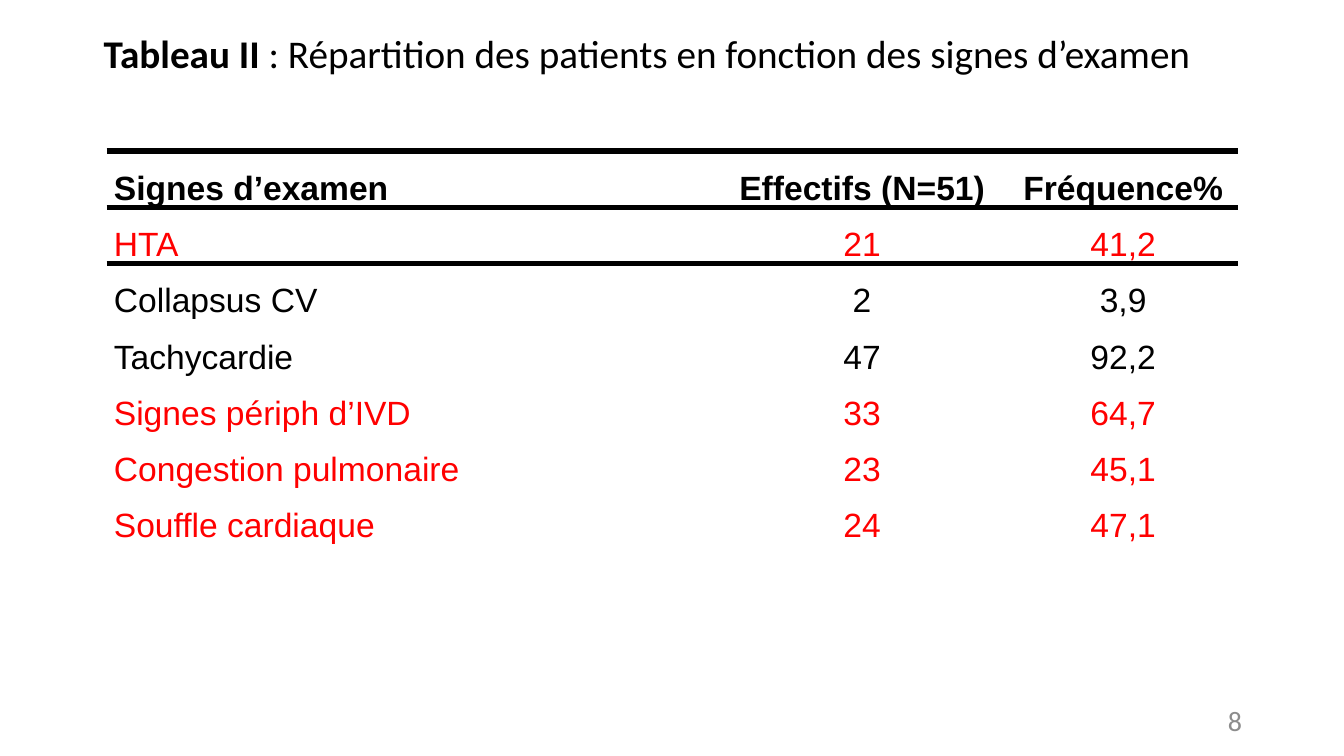
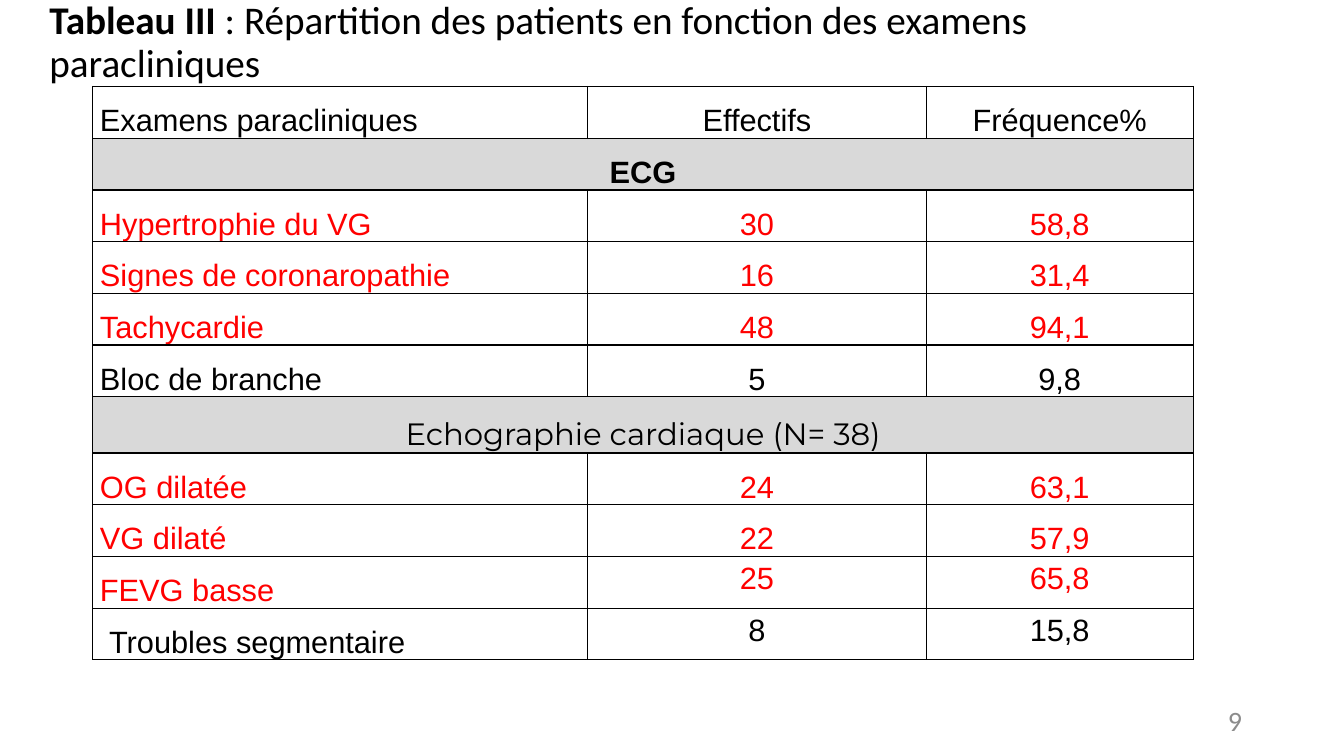
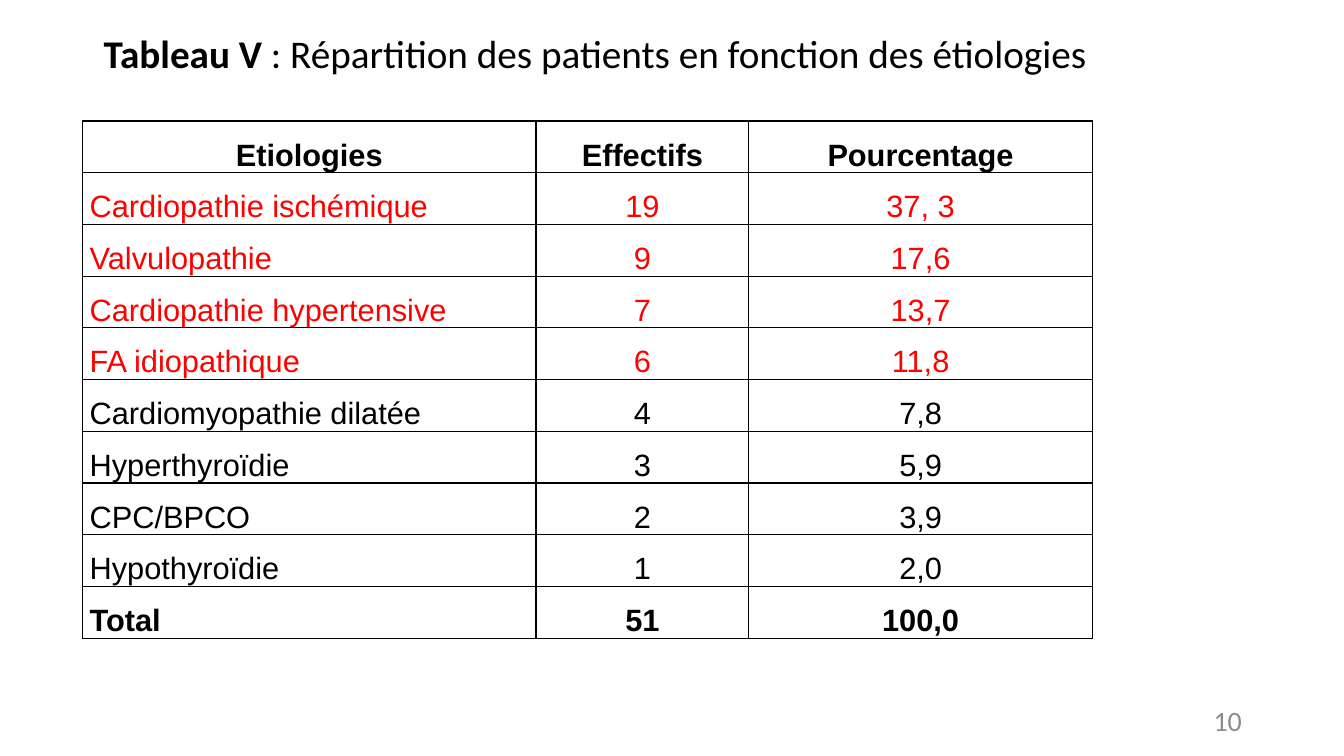
"""Build three slides of patient tables with numbered footers."""
from dataclasses import dataclass

from lxml.etree import SubElement
from pptx import Presentation
from pptx.dml.color import RGBColor
from pptx.enum.text import MSO_ANCHOR, MSO_AUTO_SIZE, PP_ALIGN
from pptx.oxml.ns import qn
from pptx.slide import Slide
from pptx.table import _Cell as Cell
from pptx.util import Cm, Pt

HUES = {"ink": "000000", "red": "FF0000", "band": "D9D9D9", "page": "8C8C8C"}
PLAIN = "{2D5ABB26-0587-4C30-8999-92F81FD0307C}"
WIDE = (2.36, 0.2, 29.21, 2.39)


@dataclass
class Row:
    cells: tuple[str, ...]
    hue: str = "ink"
    bold: bool = False
    mid: bool = False
    band: bool = False
    font: str = "Arial"
    tight: bool = False
    inset: float = 0


@dataclass
class Sheet:
    page: int
    label: str
    title: str
    box: tuple[float, float, float, float]
    left: float
    top: float
    cols: tuple[float, ...]
    high: float
    size: int
    rows: list[Row]
    boxed: bool = True


SHEETS = [
    Sheet(8, "Tableau II", " : Répartition des patients en fonction des signes d’examen",
          WIDE, 2.69, 3.81, (15.34, 7.39, 5.77), 1.41, 24, [
              Row(("Signes d’examen", "Effectifs (N=51)", "Fréquence%"), bold=True),
              Row(("HTA", "21", "41,2"), "red"),
              Row(("Collapsus CV", "2", "3,9")),
              Row(("Tachycardie", "47", "92,2")),
              Row(("Signes périph d’IVD", "33", "64,7"), "red"),
              Row(("Congestion pulmonaire", "23", "45,1"), "red"),
              Row(("Souffle cardiaque", "24", "47,1"), "red"),
          ], boxed=False),
    Sheet(9, "Tableau III", " : Répartition des patients en fonction des examens paracliniques",
          (0.99, 0, 29.97, 2.18), 2.34, 2.18, (12.47, 8.53, 6.73), 1.3, 22, [
              Row(("Examens paracliniques", "Effectifs", "Fréquence%")),
              Row(("ECG",), bold=True, mid=True, band=True),
              Row(("Hypertrophie du VG", "30", "58,8"), "red"),
              Row(("Signes de coronaropathie", "16", "31,4"), "red"),
              Row(("Tachycardie", "48", "94,1"), "red"),
              Row(("Bloc de branche", "5", "9,8")),
              Row(("Echographie cardiaque (N= 38)",), mid=True, band=True, font="Montserrat"),
              Row(("OG dilatée", "24", "63,1"), "red"),
              Row(("VG dilaté", "22", "57,9"), "red"),
              Row(("FEVG basse", "25", "65,8"), "red", tight=True),
              Row(("Troubles segmentaire", "8", "15,8"), tight=True, inset=0.23),
          ]),
    Sheet(10, "Tableau V", " : Répartition des patients en fonction des étiologies",
          WIDE, 2.08, 3.05, (11.43, 5.36, 8.66), 1.3, 22, [
              Row(("Etiologies", "Effectifs", "Pourcentage"), bold=True, mid=True),
              Row(("Cardiopathie ischémique", "19", "37, 3"), "red"),
              Row(("Valvulopathie", "9", "17,6"), "red"),
              Row(("Cardiopathie hypertensive", "7", "13,7"), "red"),
              Row(("FA idiopathique", "6", "11,8"), "red"),
              Row(("Cardiomyopathie dilatée", "4", "7,8")),
              Row(("Hyperthyroïdie", "3", "5,9")),
              Row(("CPC/BPCO", "2", "3,9")),
              Row(("Hypothyroïdie", "1", "2,0")),
              Row(("Total", "51", "100,0"), bold=True),
          ]),
]


def style(run, font: str, size: float, hue: str, bold: bool = False) -> None:
    run.font.name = font
    run.font.size = Pt(size)
    run.font.bold = bold
    run.font.color.rgb = RGBColor.from_string(HUES[hue])


def edge(cell: Cell, sides: str, width: float) -> None:
    props = cell._tc.get_or_add_tcPr()
    for side in sides:
        line = SubElement(props, qn(f"a:ln{side}"), w=str(Pt(width)))
        fill = SubElement(line, qn("a:solidFill"))
        SubElement(fill, qn("a:srgbClr"), val=HUES["ink"])


def add_title(slide: Slide, sheet: Sheet) -> None:
    shape = slide.shapes.title
    shape.left, shape.top, shape.width, shape.height = map(Cm, sheet.box)
    frame = shape.text_frame
    frame.text = sheet.label
    frame.auto_size = MSO_AUTO_SIZE.NONE
    frame.word_wrap = True
    frame.vertical_anchor = MSO_ANCHOR.MIDDLE
    frame.margin_top = frame.margin_bottom = 0
    para = frame.paragraphs[0]
    para.alignment = PP_ALIGN.LEFT
    para.line_spacing = 0.9
    para.add_run().text = sheet.title
    for run, bold in zip(para.runs, (True, False)):
        style(run, "Calibri", 28, "ink", bold)


def add_page(slide: Slide, page: int) -> None:
    frame = slide.shapes.add_textbox(Cm(23.93), Cm(17.65), Cm(7.62), Cm(1.02)).text_frame
    frame.text = str(page)
    frame.word_wrap = True
    frame.vertical_anchor = MSO_ANCHOR.MIDDLE
    para = frame.paragraphs[0]
    para.alignment = PP_ALIGN.RIGHT
    style(para.runs[0], "Calibri", 20, "page")


def write(cell: Cell, text: str, row: Row, first: bool, size: int) -> None:
    cell.text_frame.text = text
    para = cell.text_frame.paragraphs[0]
    para.alignment = PP_ALIGN.LEFT if first and not row.mid else PP_ALIGN.CENTER
    para.line_spacing = 1.15 if row.tight and not first else 1.5
    if first and row.inset:
        para._p.get_or_add_pPr().set("marL", str(Cm(row.inset)))
    style(para.runs[0], row.font, size, row.hue, row.bold)


def add_grid(slide: Slide, sheet: Sheet) -> None:
    count = len(sheet.rows)
    grid = slide.shapes.add_table(
        count, len(sheet.cols), Cm(sheet.left), Cm(sheet.top),
        Cm(sum(sheet.cols)), Cm(sheet.high * count)).table
    grid.first_row = grid.horz_banding = False
    grid._tbl.tblPr.find(qn("a:tableStyleId")).text = PLAIN
    for col, width in zip(grid.columns, sheet.cols):
        col.width = Cm(width)
    for i, row in enumerate(sheet.rows):
        grid.rows[i].height = Cm(sheet.high)
        for j in range(len(sheet.cols)):
            cell = grid.cell(i, j)
            cell.margin_left = cell.margin_right = Cm(0.18)
            cell.margin_top = cell.margin_bottom = 0
            if sheet.boxed:
                edge(cell, "LRTB", 1)
            elif i < 2:
                edge(cell, "T" if i else "TB", 4.5)
            if row.band:
                cell.fill.solid()
                cell.fill.fore_color.rgb = RGBColor.from_string(HUES["band"])
            else:
                cell.fill.background()
        if row.band:
            grid.cell(i, 0).merge(grid.cell(i, len(sheet.cols) - 1))
        for j, text in enumerate(row.cells):
            write(grid.cell(i, j), text, row, j == 0, sheet.size)


def main() -> None:
    deck = Presentation()
    deck.slide_width, deck.slide_height = Cm(33.87), Cm(19.05)
    for sheet in SHEETS:
        slide = deck.slides.add_slide(deck.slide_layouts[5])
        add_title(slide, sheet)
        add_grid(slide, sheet)
        add_page(slide, sheet.page)
    deck.save("out.pptx")


if __name__ == "__main__":
    main()
